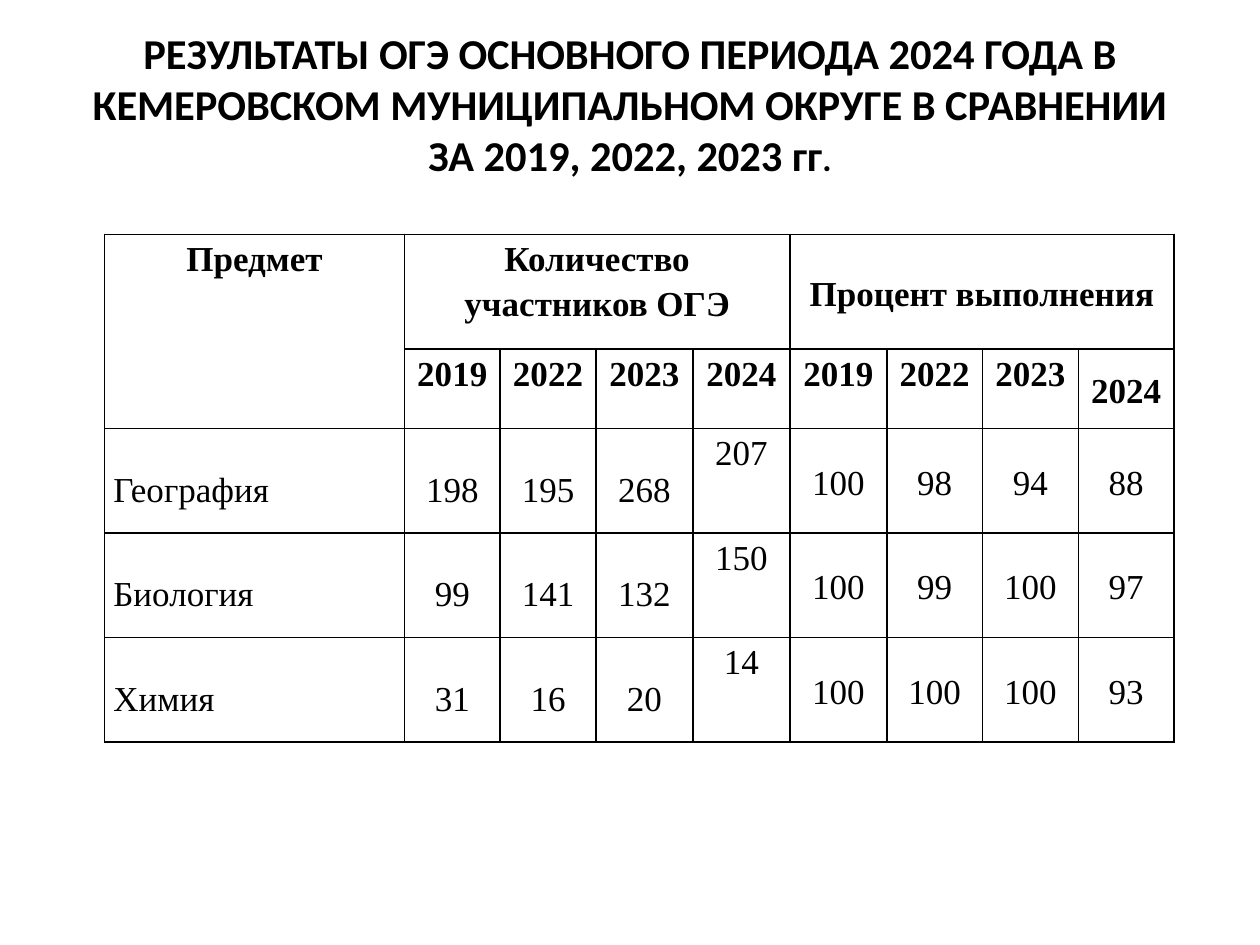
"""Build a slide comparing exam results by subject and year."""
from typing import NamedTuple

from lxml.etree import SubElement
from pptx import Presentation
from pptx.dml.color import RGBColor
from pptx.enum.text import MSO_ANCHOR, PP_ALIGN
from pptx.oxml.ns import qn
from pptx.util import Inches, Pt

BLACK = RGBColor(0x00, 0x00, 0x00)
TITLE = ("РЕЗУЛЬТАТЫ ОГЭ ОСНОВНОГО ПЕРИОДА 2024 ГОДА В КЕМЕРОВСКОМ "
         "МУНИЦИПАЛЬНОМ ОКРУГЕ В СРАВНЕНИИ ЗА 2019, 2022, 2023 гг")
YEARS = ("2019", "2022", "2023", "2024")
COL_WIDTHS = (2.38, 0.76, 0.76, 0.77, 0.77, 0.77, 0.76, 0.76, 0.76)
ROW_HEIGHTS = (0.91, 0.63, 0.83, 0.83, 0.83)
CELL_FORMAT = {"margin_left": Inches(0.07), "margin_right": Inches(0.07),
               "margin_top": 0, "margin_bottom": 0}


class Subject(NamedTuple):
    name: str
    participants: tuple[int, ...]
    percents: tuple[int, ...]


class CellStyle(NamedTuple):
    anchor: MSO_ANCHOR = MSO_ANCHOR.MIDDLE
    spacing: float = 1.15
    align: PP_ALIGN = PP_ALIGN.CENTER
    bold: bool = False


HEADER_TOP = CellStyle(anchor=MSO_ANCHOR.TOP, bold=True)
HEADER_MIDDLE = CellStyle(bold=True)
NAME = CellStyle(spacing=1.5, align=PP_ALIGN.LEFT)
COUNT = CellStyle(spacing=1.5)
LAST_COUNT = CellStyle(anchor=MSO_ANCHOR.TOP)
PERCENT = CellStyle()

SUBJECTS = (
    Subject("География", (198, 195, 268, 207), (100, 98, 94, 88)),
    Subject("Биология", (99, 141, 132, 150), (100, 99, 100, 97)),
    Subject("Химия", (31, 16, 20, 14), (100, 100, 100, 93)),
)


def set_attrs(obj: object, values: dict) -> None:
    for name, value in values.items():
        setattr(obj, name, value)


def add_run(p, text: str, font: str, size: float, bold: bool) -> None:
    r = p.add_run()
    r.text = text
    set_attrs(r.font, {"name": font, "size": Pt(size), "bold": bold})
    r.font.color.rgb = BLACK


def add_borders(cell) -> None:
    tc_pr = cell._tc.get_or_add_tcPr()
    for side in ("a:lnL", "a:lnR", "a:lnT", "a:lnB"):
        ln = SubElement(tc_pr, qn(side), w=str(Pt(1)))
        fill = SubElement(ln, qn("a:solidFill"))
        SubElement(fill, qn("a:srgbClr"), val=str(BLACK))


def write_cell(cell, text: str, style: CellStyle) -> None:
    cell.vertical_anchor = style.anchor
    p = cell.text_frame.paragraphs[0]
    set_attrs(p, {"alignment": style.align, "line_spacing": style.spacing})
    add_run(p, text, "Times New Roman", 20, style.bold)


def add_title(s) -> None:
    sp = s.shapes.title
    set_attrs(sp, {"left": Inches(0.5), "top": Inches(0.2),
                   "width": Inches(9), "height": Inches(1.25)})
    tf = sp.text_frame
    set_attrs(tf, {"word_wrap": True, "vertical_anchor": MSO_ANCHOR.MIDDLE,
                   "margin_top": 0, "margin_bottom": 0})
    p = tf.paragraphs[0]
    p.alignment = PP_ALIGN.CENTER
    add_run(p, TITLE, "Calibri", 24.3, True)
    add_run(p, ".", "Calibri", 19.8, True)


def add_results(s) -> None:
    table = s.shapes.add_table(len(ROW_HEIGHTS), len(COL_WIDTHS), Inches(0.83), Inches(1.86),
                               Inches(8.5), Inches(4.02)).table
    set_attrs(table, {"first_row": False, "horz_banding": False})
    for col, width in zip(table.columns, COL_WIDTHS):
        col.width = Inches(width)
    for row, height in zip(table.rows, ROW_HEIGHTS):
        row.height = Inches(height)
    for cell in table.iter_cells():
        set_attrs(cell, CELL_FORMAT)
        add_borders(cell)
        cell.fill.background()

    table.cell(0, 0).merge(table.cell(1, 0))
    for first in (1, 5):
        table.cell(0, first).merge(table.cell(0, first + 3))
    write_cell(table.cell(0, 0), "Предмет", HEADER_TOP)
    write_cell(table.cell(0, 1), "Количество участников ОГЭ", HEADER_TOP)
    write_cell(table.cell(0, 5), "Процент выполнения", HEADER_MIDDLE)

    year_styles = [HEADER_TOP] * 7 + [HEADER_MIDDLE]
    for col, (year, style) in enumerate(zip(YEARS * 2, year_styles), 1):
        write_cell(table.cell(1, col), year, style)
    row_styles = [NAME] + [COUNT] * 3 + [LAST_COUNT] + [PERCENT] * 4
    for row, subject in enumerate(SUBJECTS, 2):
        values = (subject.name, *subject.participants, *subject.percents)
        for col, (value, style) in enumerate(zip(values, row_styles)):
            write_cell(table.cell(row, col), str(value), style)


def main() -> None:
    prs = Presentation()
    set_attrs(prs, {"slide_width": Inches(10), "slide_height": Inches(7.5)})
    s = prs.slides.add_slide(prs.slide_layouts[5])
    add_title(s)
    add_results(s)
    prs.save("out.pptx")


if __name__ == "__main__":
    main()
